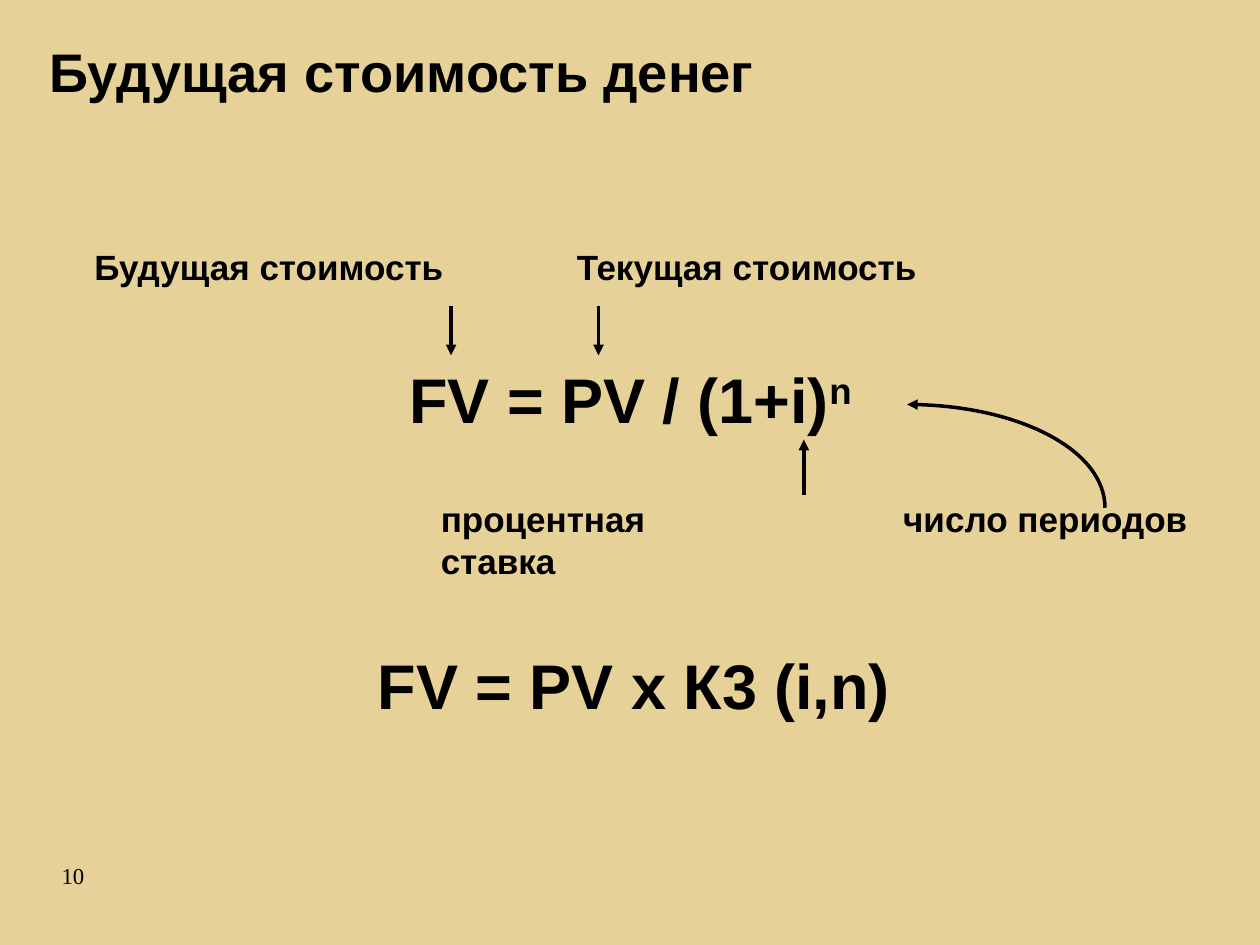
from lxml.etree import SubElement
from pptx import Presentation
from pptx.dml.color import RGBColor
from pptx.enum.shapes import MSO_CONNECTOR
from pptx.enum.text import MSO_ANCHOR, MSO_AUTO_SIZE, PP_ALIGN
from pptx.oxml.ns import qn
from pptx.util import Inches, Pt

INK = "000000"
SAND = "E6D199"
LABEL_ROWS = (1.9, 3.9)
ARROW_TOP, ARROW_BOTTOM = 2.43, 2.82


def color(value):
    return RGBColor.from_string(value)


def write(shape, text, size, wrap=False, font="Arial", bold=True):
    frame = shape.text_frame
    frame.word_wrap = wrap
    frame.auto_size = MSO_AUTO_SIZE.NONE
    frame.vertical_anchor = MSO_ANCHOR.TOP
    paragraph = frame.paragraphs[0]
    paragraph.text = text
    paragraph.alignment = PP_ALIGN.LEFT
    paragraph.font.name = font
    paragraph.font.size = Pt(size)
    paragraph.font.bold = bold
    paragraph.font.color.rgb = color(INK)
    return paragraph


def add_text(slide, box, text, size, **style):
    shape = slide.shapes.add_textbox(*map(Inches, box))
    return write(shape, text, size, **style)


def add_title(slide, box, text):
    title = slide.shapes.title
    title.left, title.top, title.width, title.height = map(Inches, box)
    write(title, text, 31, wrap=True)


def style_line(shape, arrow_end):
    shape.line.color.rgb = color(INK)
    shape.line.width = Pt(2)
    line = shape.line._get_or_add_ln()
    SubElement(line, qn(f"a:{arrow_end}"), type="triangle")


def add_arrow(slide, x, start, end):
    arrow = slide.shapes.add_connector(
        MSO_CONNECTOR.STRAIGHT, Inches(x), Inches(start), Inches(x), Inches(end)
    )
    style_line(arrow, "tailEnd")
    SubElement(arrow._element.spPr, qn("a:effectLst"))


def add_curved_arrow(slide, points):
    start, *others = [(Inches(x), Inches(y)) for x, y in points]
    builder = slide.shapes.build_freeform(*start)
    builder.add_line_segments(others, close=False)
    curve = builder.convert_to_shape()
    outline = next(curve._element.iter(qn("a:path")))
    segments = outline.findall(qn("a:lnTo"))
    bezier = SubElement(outline, qn("a:cubicBezTo"))
    for segment in segments:
        bezier.append(segment[0])
        outline.remove(segment)
    curve.fill.background()
    curve.shadow.inherit = False
    style_line(curve, "headEnd")


def main():
    presentation = Presentation()
    presentation.slide_width = Inches(10)
    presentation.slide_height = Inches(7.5)
    slide = presentation.slides.add_slide(presentation.slide_layouts[5])
    slide.background.fill.solid()
    slide.background.fill.fore_color.rgb = color(SAND)

    add_title(slide, (0.29, 0.25, 9.58, 0.61), "Будущая стоимость денег")
    add_text(slide, (0.39, 6.79, 0.41, 0.32), "10", 13,
             font="Times New Roman", bold=False)

    formula = add_text(slide, (3.15, 2.81, 3.77, 0.7), "FV = PV / (1+i)", 36)
    exponent = formula.add_run()
    exponent.text = "n"
    exponent.font._element.set("baseline", "30000")
    add_text(slide, (2.9, 5.08, 4.27, 1.31), "FV = PV x К3 (i,n)", 36, wrap=True)

    labels = [
        (0.65, 0, 2.99, "Будущая стоимость", False),
        (4.48, 0, 2.91, "Текущая стоимость", False),
        (3.4, 1, 2.7, "процентная ставка", True),
        (7.07, 1, 2.46, "число периодов", False),
    ]
    for left, row, width, text, wrap in labels:
        add_text(slide, (left, LABEL_ROWS[row], width, 0.43), text, 20, wrap=wrap)

    for x in (3.58, 4.75):
        add_arrow(slide, x, ARROW_TOP, ARROW_BOTTOM)
    add_arrow(slide, 6.38, 3.93, 3.49)
    add_curved_arrow(slide, [(7.2, 3.21), (8.07, 3.21), (8.77, 3.58), (8.77, 4.03)])

    presentation.save("out.pptx")


if __name__ == "__main__":
    main()
